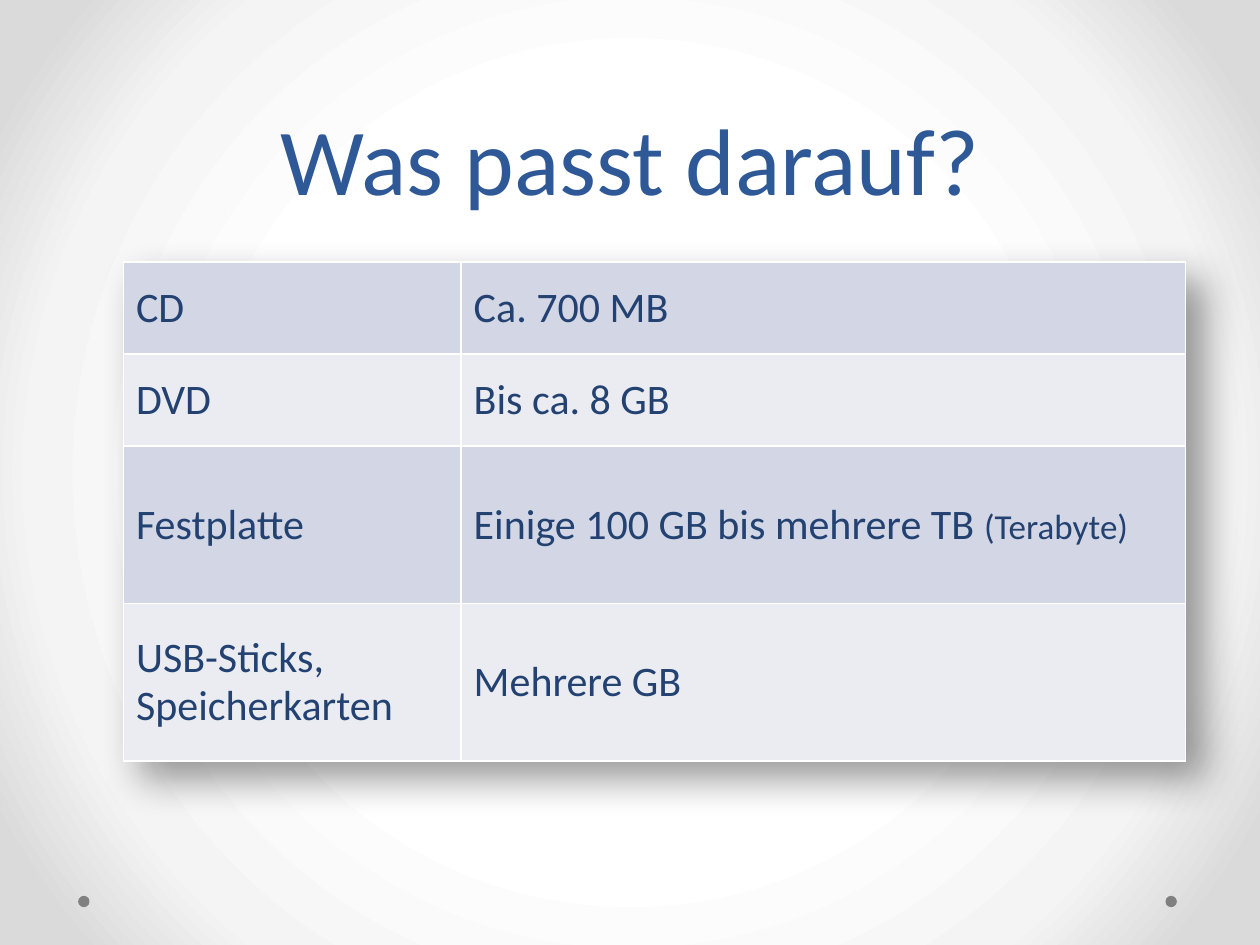
"""Build a slide with a table of what fits on common storage media."""
from dataclasses import dataclass

import pptx
import pptx.dml.color
import pptx.enum.shapes
import pptx.enum.text
import pptx.oxml
import pptx.oxml.ns
import pptx.util

Inches = pptx.util.Inches
Pt = pptx.util.Pt
NS = pptx.oxml.ns.nsdecls("a")


@dataclass(frozen=True)
class Theme:
    font: str = "Calibri"
    title: str = "2F5897"
    text: str = "234271"
    dot: str = "808080"
    border: str = "FFFFFF"
    bands: tuple = ("D2D6E5", "EAECF2")
    backdrop: tuple = ((50, "FFFFFF"), (76, "F4F4F4"), (92, "DADADA"))
    title_size: int = 54
    body_size: int = 24
    note_size: int = 20


theme = Theme()


def rgb(value):
    return pptx.dml.color.RGBColor.from_string(value)


def style(font, size, color):
    font.name = theme.font
    font.size = Pt(size)
    font.color.rgb = rgb(color)


deck = pptx.Presentation()
deck.slide_width = Inches(10)
deck.slide_height = Inches(7.5)
slide = deck.slides.add_slide(deck.slide_layouts[6])

slide.background.fill.gradient()
gradient = slide.background._cSld.find(".//" + pptx.oxml.ns.qn("a:gradFill"))
stops = "".join(
    f'<a:gs pos="{position * 1000}"><a:srgbClr val="{color}"/></a:gs>'
    for position, color in theme.backdrop
)
gradient.getparent().replace(gradient, pptx.oxml.parse_xml(
    f'<a:gradFill {NS} rotWithShape="1"><a:gsLst>{stops}</a:gsLst><a:path path="circle">'
    '<a:fillToRect l="50000" t="50000" r="50000" b="50000"/></a:path></a:gradFill>'
))

for left in (9.25, 0.62):
    dot = slide.shapes.add_shape(
        pptx.enum.shapes.MSO_SHAPE.OVAL, Inches(left), Inches(7.11), Inches(0.09), Inches(0.09)
    )
    dot.shadow.inherit = False
    dot.fill.solid()
    dot.fill.fore_color.rgb = rgb(theme.dot)
    dot.line.fill.background()

title = slide.shapes.add_textbox(Inches(0.5), Inches(0), Inches(9), Inches(1.75)).text_frame
title.word_wrap = True
title.vertical_anchor = pptx.enum.text.MSO_ANCHOR.BOTTOM
heading = title.paragraphs[0]
heading.text = "Was passt darauf?"
heading.alignment = pptx.enum.text.PP_ALIGN.CENTER
heading.line_spacing = Pt(58)
style(heading.font, theme.title_size, theme.title)

media = (
    ("CD", "Ca. 700 MB", "", 0.73),
    ("DVD", "Bis ca. 8 GB", "", 0.73),
    ("Festplatte", "Einige 100 GB bis mehrere TB ", "(Terabyte)", 1.25),
    ("USB-Sticks, Speicherkarten", "Mehrere GB", "", 1.25),
)
capacities = slide.shapes.add_table(
    len(media), 2, Inches(0.98), Inches(2.08), Inches(8.43), Inches(3.95)
).table
capacities.first_row = False
capacities._tbl.tblPr.insert(0, pptx.oxml.parse_xml(
    f'<a:effectLst {NS}><a:outerShdw blurRad="{Inches(0.32)}" dist="{Inches(0.2)}" '
    'dir="2700000" algn="tl" rotWithShape="0"><a:srgbClr val="000000">'
    '<a:alpha val="40000"/></a:srgbClr></a:outerShdw></a:effectLst>'
))
for column, width in zip(capacities.columns, (2.68, 5.75)):
    column.width = Inches(width)

for row, (medium, capacity, note, height) in enumerate(media):
    capacities.rows[row].height = Inches(height)
    for column, words in enumerate((medium, capacity)):
        cell = capacities.cell(row, column)
        cell.vertical_anchor = pptx.enum.text.MSO_ANCHOR.MIDDLE
        entry = cell.text_frame.paragraphs[0]
        entry.line_spacing = 0.93
        style(entry.font, theme.body_size, theme.text)
        entry.add_run().text = words
        if column == 1 and note:
            remark = entry.add_run()
            remark.text = note
            remark.font.size = Pt(theme.note_size)
        properties = cell._tc.get_or_add_tcPr()
        for side in ("lnL", "lnR", "lnT", "lnB"):
            properties.append(pptx.oxml.parse_xml(
                f'<a:{side} {NS} w="{Pt(1)}"><a:solidFill>'
                f'<a:srgbClr val="{theme.border}"/></a:solidFill></a:{side}>'
            ))
        cell.fill.solid()
        cell.fill.fore_color.rgb = rgb(theme.bands[row % 2])

deck.save("out.pptx")
